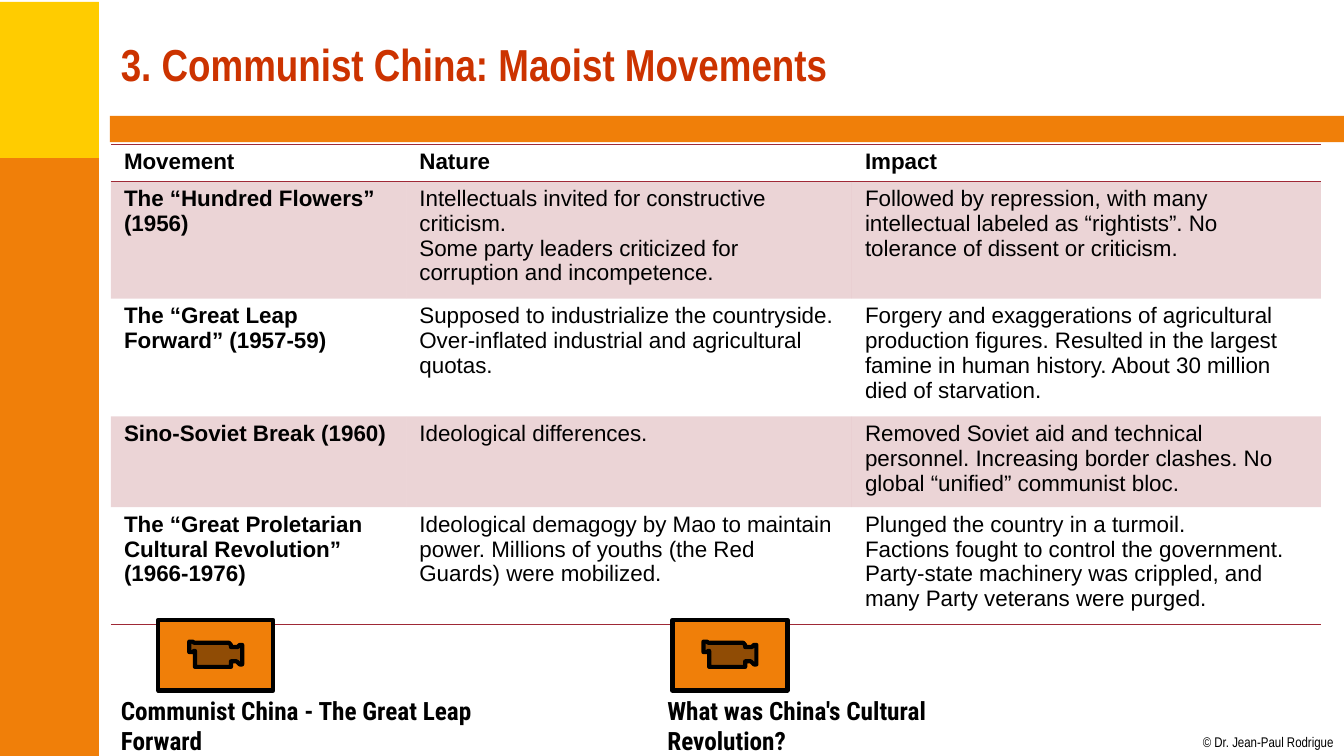
from dataclasses import dataclass

import lxml.etree
import pptx
import pptx.dml.color
import pptx.enum.shapes
import pptx.enum.text
import pptx.oxml.ns
import pptx.util

Inches = pptx.util.Inches
Pt = pptx.util.Pt
Shape = pptx.enum.shapes.MSO_SHAPE
Anchor = pptx.enum.text.MSO_ANCHOR
qn = pptx.oxml.ns.qn


@dataclass(frozen=True)
class Theme:
    yellow: str = "FFCC00"
    orange: str = "F07F09"
    title: str = "CC3300"
    table: str = "9F2936"
    text: str = "000000"
    band_alpha: int = 20000
    title_font: str = "Arial Narrow"
    table_font: str = "Arial"
    caption_font: str = "Roboto Condensed"
    title_size: int = 32
    caption_size: int = 18
    table_size: int = 16
    credit_size: int = 10
    plain_table: str = "{2D5ABB26-0587-4C30-8999-92F81FD0307C}"


THEME = Theme()

MOVEMENTS = [
    ("Movement", "Nature", "Impact"),
    ("The “Hundred Flowers” (1956)",
     "Intellectuals invited for constructive criticism.\n"
     "Some party leaders criticized for corruption and incompetence.",
     "Followed by repression, with many intellectual labeled as “rightists”. "
     "No tolerance of dissent or criticism."),
    ("The “Great Leap Forward” (1957-59)",
     "Supposed to industrialize the countryside. "
     "Over-inflated industrial and agricultural quotas.",
     "Forgery and exaggerations of agricultural production figures. Resulted in "
     "the largest famine in human history. About 30 million died of starvation."),
    ("Sino-Soviet Break (1960)",
     "Ideological differences.",
     "Removed Soviet aid and technical personnel. Increasing border clashes. "
     "No global “unified” communist bloc."),
    ("The “Great Proletarian Cultural Revolution” (1966-1976)",
     "Ideological demagogy by Mao to maintain power. "
     "Millions of youths (the Red Guards) were mobilized.",
     "Plunged the country in a turmoil.\n"
     "Factions fought to control the government. Party-state machinery was "
     "crippled, and many Party veterans were purged."),
]
COLUMN_WIDTHS = (2.93, 4.42, 4.65)


def rgb(value):
    return pptx.dml.color.RGBColor.from_string(value)


def style_text(frame, font, size, color, bold=False):
    for paragraph in frame.paragraphs:
        paragraph.font.name = font
        paragraph.font.size = Pt(size)
        paragraph.font.bold = bold
        paragraph.font.color.rgb = rgb(color)


def add_block(slide, preset, box, fill, line_width=0):
    block = slide.shapes.add_shape(preset, *map(Inches, box))
    block.shadow.inherit = False
    block.fill.solid()
    block.fill.fore_color.rgb = rgb(fill)
    if line_width:
        block.line.color.rgb = rgb(THEME.text)
        block.line.width = Pt(line_width)
    else:
        block.line.fill.background()


def add_label(slide, text, box, font, size, color, bold=True):
    frame = slide.shapes.add_textbox(*map(Inches, box)).text_frame
    frame.word_wrap = True
    frame.text = text
    style_text(frame, font, size, color, bold)
    return frame


def add_frame(slide, width, height):
    """Draw the side column, the bar under the title and the credit line."""
    side, split, bar_left = 0.98, 1.57, 1.09
    add_block(slide, Shape.RECTANGLE, (0, 0.02, side, split), THEME.yellow)
    add_block(slide, Shape.RECTANGLE, (0, split, side, height - split), THEME.orange)
    add_block(slide, Shape.RECTANGLE, (bar_left, 1.15, width - bar_left, 0.26), THEME.orange)
    credit = add_label(slide, "© Dr. Jean-Paul Rodrigue",
                       (width - 1.4, height - 0.22, 1.31, 0.17),
                       THEME.title_font, THEME.credit_size, THEME.text, bold=False)
    credit.margin_left = credit.margin_right = 0
    credit.margin_top = credit.margin_bottom = 0
    credit.word_wrap = False


def add_title(slide, text, box):
    title = add_label(slide, text, box, THEME.title_font, THEME.title_size, THEME.title)
    title.vertical_anchor = Anchor.MIDDLE


def add_border(cell, side):
    line = lxml.etree.SubElement(cell._tc.get_or_add_tcPr(), qn(f"a:{side}"), w=str(Pt(1)))
    fill = lxml.etree.SubElement(line, qn("a:solidFill"))
    lxml.etree.SubElement(fill, qn("a:srgbClr"), val=THEME.table)


def fill_cell(cell, banded):
    if not banded:
        cell.fill.background()
        return
    cell.fill.solid()
    cell.fill.fore_color.rgb = rgb(THEME.table)
    color = cell._tc.tcPr.find(f"{qn('a:solidFill')}/{qn('a:srgbClr')}")
    lxml.etree.SubElement(color, qn("a:alpha"), val=str(THEME.band_alpha))


def add_movements(slide, left, top, height):
    """Place the table; each row is as tall as its text."""
    graphic = slide.shapes.add_table(
        len(MOVEMENTS), len(COLUMN_WIDTHS), Inches(left), Inches(top),
        Inches(sum(COLUMN_WIDTHS)), Inches(height))
    table = graphic.table
    table._tbl.tblPr.find(qn("a:tableStyleId")).text = THEME.plain_table
    table.horz_banding = False
    for column, width in zip(table.columns, COLUMN_WIDTHS):
        column.width = Inches(width)
    for row in table.rows:
        row.height = Inches(0)
    graphic.height = Inches(height)

    last = len(MOVEMENTS) - 1
    for r, movement in enumerate(MOVEMENTS):
        for c, text in enumerate(movement):
            cell = table.cell(r, c)
            cell.text = text
            cell.margin_left = cell.margin_right = Inches(0.13)
            cell.margin_top = cell.margin_bottom = Inches(0.05)
            style_text(cell.text_frame, THEME.table_font, THEME.table_size,
                       THEME.text, bold=r == 0 or c == 0)
            if r == 0:
                add_border(cell, "lnT")
            if r in (0, last):
                add_border(cell, "lnB")
            fill_cell(cell, banded=r % 2 == 1)


def add_video(slide, caption, box, button_offset):
    """Place a movie button above its caption."""
    left, top, width, height = box
    button_height = 0.7
    add_block(slide, Shape.ACTION_BUTTON_MOVIE,
              (left + button_offset, top, 1.14, button_height), THEME.orange, line_width=3)
    add_label(slide, caption, (left, top + button_height, width, height - button_height),
              THEME.caption_font, THEME.caption_size, THEME.text)


def main():
    width, height, left = 13.33, 7.5, 1.1
    deck = pptx.Presentation()
    deck.slide_width, deck.slide_height = Inches(width), Inches(height)
    slide = deck.slides.add_slide(deck.slide_layouts[6])

    add_frame(slide, width, height)
    add_title(slide, "3. Communist China: Maoist Movements", (left, 0.11, 12, 1.04))
    add_movements(slide, left, 1.43, 4.23)
    add_video(slide, "Communist China - The Great Leap Forward", (left, 6.15, 3.94, 1.1), 0.47)
    add_video(slide, "What was China's Cultural Revolution?", (6.52, 6.15, 3.49, 1.1), 0.15)
    deck.save("out.pptx")


if __name__ == "__main__":
    main()
